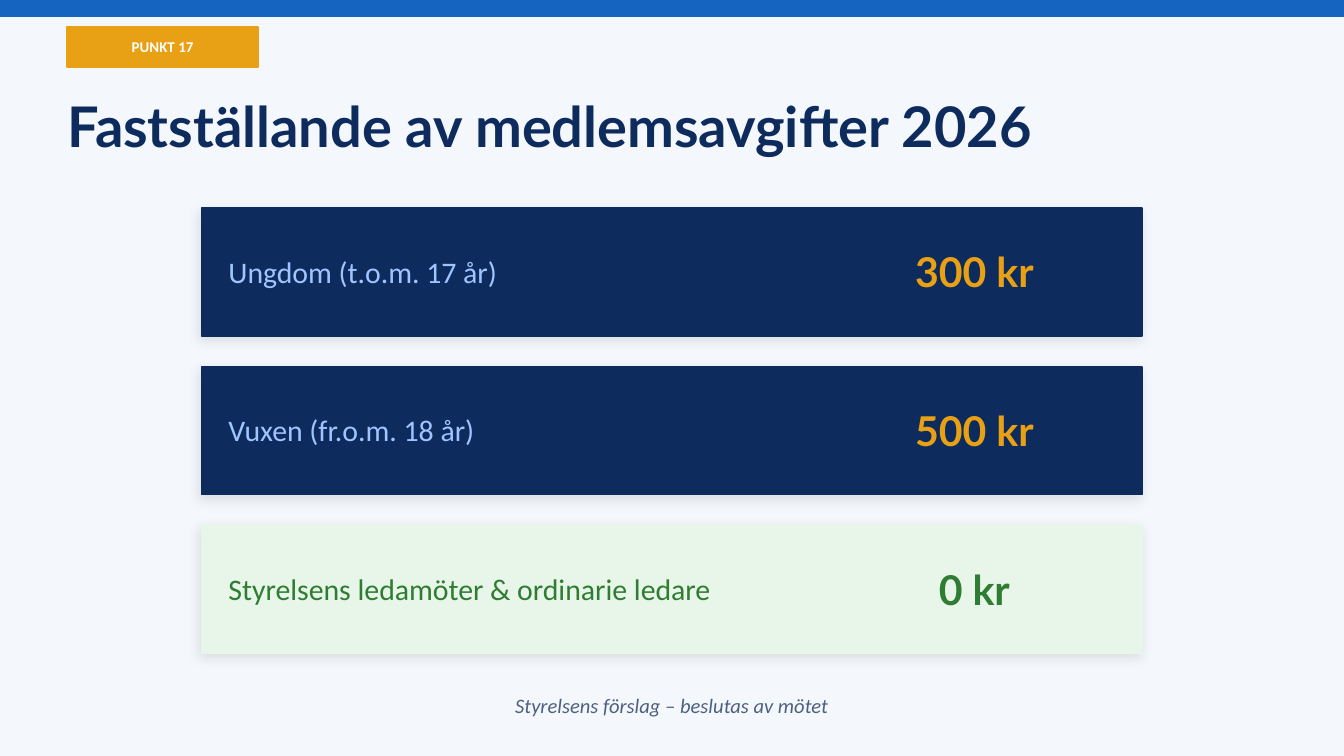
from lxml.etree import SubElement
from pptx import Presentation
from pptx.dml.color import RGBColor
from pptx.enum.shapes import MSO_SHAPE
from pptx.enum.text import MSO_ANCHOR, PP_ALIGN
from pptx.oxml.ns import qn
from pptx.util import Pt

BACKGROUND = RGBColor(0xF4, 0xF7, 0xFB)
BLUE = RGBColor(0x15, 0x65, 0xC0)
NAVY = RGBColor(0x0D, 0x2B, 0x5C)
LIGHT_BLUE = RGBColor(0xA0, 0xC4, 0xFF)
AMBER = RGBColor(0xE8, 0xA0, 0x14)
GREEN = RGBColor(0x2E, 0x7D, 0x32)
PALE_GREEN = RGBColor(0xE8, 0xF5, 0xE9)
SLATE = RGBColor(0x4E, 0x60, 0x80)
WHITE = RGBColor(0xFF, 0xFF, 0xFF)

TAG_FORMAT = {"name": "Calibri", "size": Pt(8), "bold": True}
TITLE_FORMAT = {"name": "Lato", "size": Pt(30), "bold": True}
GROUP_FORMAT = {"name": "Calibri", "size": Pt(16)}
FEE_FORMAT = {"name": "Lato", "size": Pt(22), "bold": True}
NOTE_FORMAT = {"name": "Calibri", "size": Pt(11), "italic": True}

SLIDE_WIDTH, SLIDE_HEIGHT = 720, 405
MARGIN = 36
CONTENT_WIDTH = SLIDE_WIDTH - 2 * MARGIN
CARD_LEFT, CARD_TOP, CARD_WIDTH, CARD_HEIGHT = 108, 111.6, 504, 68.4
CARD_PITCH = 84.96
CARD_INSET, ROW_HEIGHT = 5.76, 56.16

FEES = [
    ("Ungdom (t.o.m. 17 år)", "300 kr", NAVY, LIGHT_BLUE, AMBER),
    ("Vuxen (fr.o.m. 18 år)", "500 kr", NAVY, LIGHT_BLUE, AMBER),
    ("Styrelsens ledamöter & ordinarie ledare", "0 kr", PALE_GREEN, GREEN, GREEN),
]


def add_panel(slide, box, color):
    panel = slide.shapes.add_shape(MSO_SHAPE.RECTANGLE, *map(Pt, box))
    panel.shadow.inherit = False
    panel.fill.solid()
    panel.fill.fore_color.rgb = color
    panel.line.color.rgb = color
    panel.line.width = Pt(1)
    return panel


def add_soft_shadow(panel):
    """Give the panel a faint black shadow towards the lower left."""
    effects = panel.fill._xPr.find(qn("a:effectLst"))
    shadow = SubElement(effects, qn("a:outerShdw"), blurRad=str(Pt(6)),
                        dist=str(Pt(2)), dir=str(135 * 60000),
                        algn="bl", rotWithShape="0")
    black = SubElement(shadow, qn("a:srgbClr"), val="000000")
    SubElement(black, qn("a:alpha"), val="10000")


def add_text(slide, box, text, font_format, color, align=PP_ALIGN.LEFT):
    frame = slide.shapes.add_textbox(*map(Pt, box)).text_frame
    frame.word_wrap = True
    frame.vertical_anchor = MSO_ANCHOR.MIDDLE
    for side in ("left", "top", "right", "bottom"):
        setattr(frame, f"margin_{side}", 0)
    paragraph = frame.paragraphs[0]
    paragraph.alignment = align
    run = paragraph.add_run()
    run.text = text
    for attribute, value in font_format.items():
        setattr(run.font, attribute, value)
    run.font.color.rgb = color


def add_fee_card(slide, top, group, fee, card_color, group_color, fee_color):
    card = add_panel(slide, (CARD_LEFT, top, CARD_WIDTH, CARD_HEIGHT), card_color)
    add_soft_shadow(card)
    row_top = top + CARD_INSET
    add_text(slide, (122.4, row_top, 324, ROW_HEIGHT), group, GROUP_FORMAT, group_color)
    add_text(slide, (446.4, row_top, 151.2, ROW_HEIGHT), fee, FEE_FORMAT, fee_color,
             PP_ALIGN.CENTER)


def main():
    presentation = Presentation()
    presentation.slide_width = Pt(SLIDE_WIDTH)
    presentation.slide_height = Pt(SLIDE_HEIGHT)
    slide = presentation.slides.add_slide(presentation.slide_layouts[6])
    slide.background.fill.solid()
    slide.background.fill.fore_color.rgb = BACKGROUND

    add_panel(slide, (0, 0, SLIDE_WIDTH, 8.64), BLUE)
    tag_box = (MARGIN, 14.4, 102.24, 21.6)
    add_panel(slide, tag_box, AMBER)
    add_text(slide, tag_box, "PUNKT 17", TAG_FORMAT, WHITE, PP_ALIGN.CENTER)
    add_text(slide, (MARGIN, 41.76, CONTENT_WIDTH, 50.4),
             "Fastställande av medlemsavgifter 2026", TITLE_FORMAT, NAVY)

    for index, fee_row in enumerate(FEES):
        add_fee_card(slide, CARD_TOP + index * CARD_PITCH, *fee_row)

    add_text(slide, (MARGIN, 367.2, CONTENT_WIDTH, 21.6),
             "Styrelsens förslag – beslutas av mötet", NOTE_FORMAT, SLATE,
             PP_ALIGN.CENTER)
    presentation.save("out.pptx")


if __name__ == "__main__":
    main()
